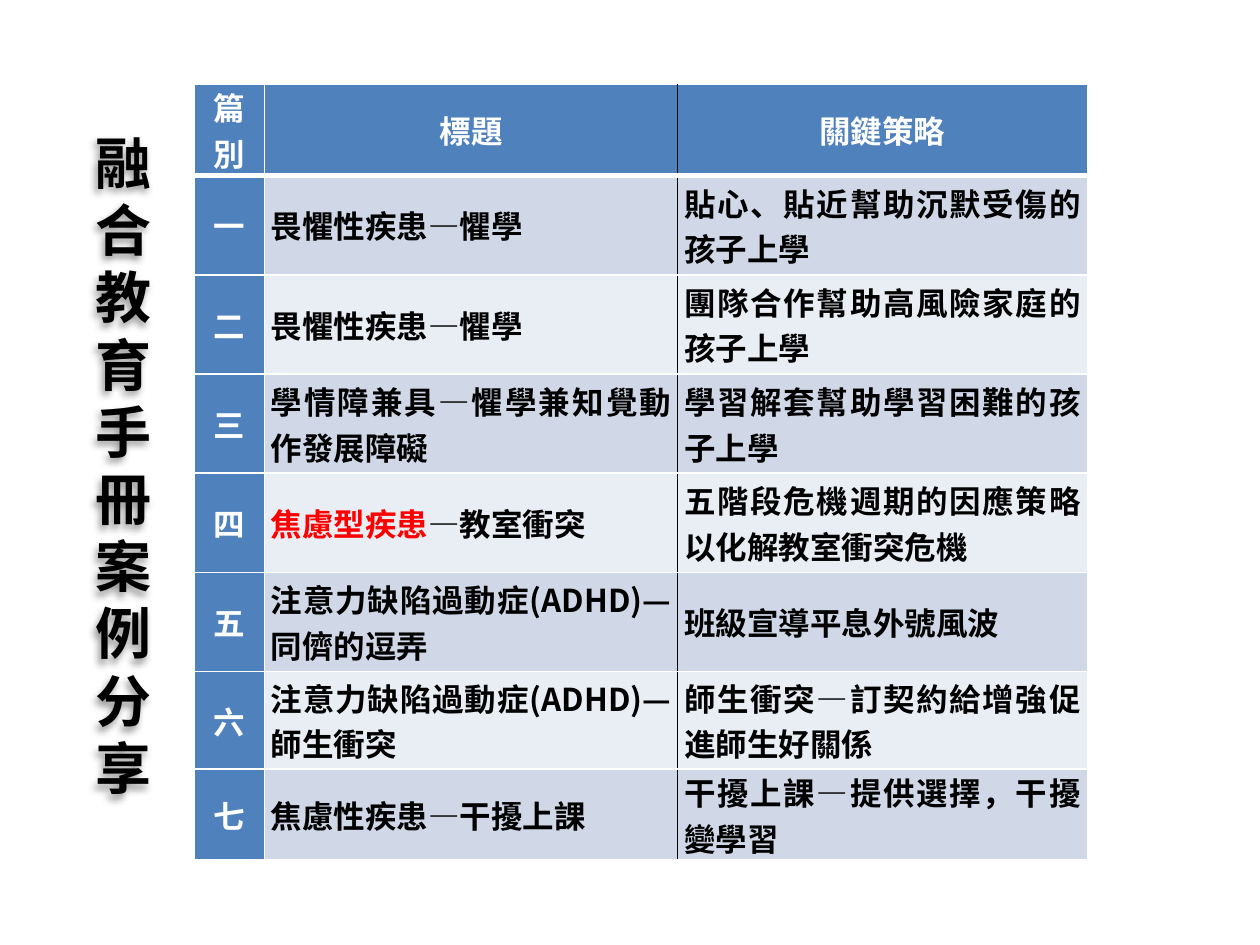
"""Build a slide listing the case studies of an inclusive education handbook."""
from typing import NamedTuple

from lxml import etree
from pptx import Presentation
from pptx.dml.color import RGBColor
from pptx.enum.text import MSO_ANCHOR, MSO_AUTO_SIZE, PP_ALIGN
from pptx.oxml import parse_xml
from pptx.oxml.ns import nsdecls, qn
from pptx.util import Cm, Pt

CENTER, JUSTIFY = PP_ALIGN.CENTER, PP_ALIGN.JUSTIFY
MIDDLE = MSO_ANCHOR.MIDDLE
GROW = MSO_AUTO_SIZE.SHAPE_TO_FIT_TEXT
FONT = "Noto Sans CJK SC"
COLORS = {
    "white": "FFFFFF",
    "black": "000000",
    "red": "FF0000",
    "blue": "4F81BD",
    "odd": "D0D8E8",
    "even": "E9EDF4",
}
COLUMN_WIDTHS = (1.42, 8.33, 8.26)
ROW_HEIGHTS = (1.83, *[2.0] * 5, 1.96, 1.83)


class Case(NamedTuple):
    """One row of the table, with an optional highlighted start of the topic."""

    number: str
    topic: str
    strategy: str
    highlight: str = ""


HEADER = Case("篇別", "標題", "關鍵策略")
CASES = (
    Case("一", "畏懼性疾患—懼學", "貼心、貼近幫助沉默受傷的孩子上學"),
    Case("二", "畏懼性疾患—懼學", "團隊合作幫助高風險家庭的孩子上學"),
    Case("三", "學情障兼具—懼學兼知覺動作發展障礙", "學習解套幫助學習困難的孩子上學"),
    Case("四", "—教室衝突", "五階段危機週期的因應策略以化解教室衝突危機", "焦慮型疾患"),
    Case("五", "注意力缺陷過動症(ADHD)—同儕的逗弄", "班級宣導平息外號風波"),
    Case("六", "注意力缺陷過動症(ADHD)—師生衝突", "師生衝突—訂契約給增強促進師生好關係"),
    Case("七", "焦慮性疾患—干擾上課", "干擾上課—提供選擇，干擾變學習"),
)


def rgb(name: str) -> RGBColor:
    """Return a named colour."""
    return RGBColor.from_string(COLORS[name])


def style_paragraph(para, size: int, color: str, align) -> None:
    """Set the alignment and the bold font of a paragraph."""
    para.alignment = align
    font = para.font
    font.name, font.size, font.bold = FONT, Pt(size), True
    font.color.rgb = rgb(color)
    defaults = para._p.pPr.find(qn("a:defRPr"))
    etree.SubElement(defaults, qn("a:ea")).set("typeface", FONT)


def set_borders(cell, row: int, column: int) -> None:
    """Draw white cell borders, with a black rule between the text columns."""
    borders = (
        ("lnL", "black" if column == 2 else "white", 1),
        ("lnR", "black" if column == 1 else "white", 1),
        ("lnT", "white", 3 if row == 1 else 1),
        ("lnB", "white", 3 if row == 0 else 1),
    )
    properties = cell._tc.get_or_add_tcPr()
    for position, (tag, color, width) in enumerate(borders):
        line = parse_xml(
            f'<a:{tag} {nsdecls("a")} w="{Pt(width)}"><a:solidFill>'
            f'<a:srgbClr val="{COLORS[color]}"/></a:solidFill></a:{tag}>'
        )
        properties.insert(position, line)


def fill_cell(cell, row: int, column: int, case: Case) -> None:
    """Write and style one table cell."""
    is_heading = row == 0 or column == 0
    band = "odd" if row % 2 else "even"
    cell.fill.solid()
    cell.fill.fore_color.rgb = rgb("blue" if is_heading else band)
    cell.vertical_anchor = MIDDLE
    cell.margin_left = cell.margin_right = Cm(0.13)
    cell.margin_top = cell.margin_bottom = Cm(0)
    para = cell.text_frame.paragraphs[0]
    if column == 1 and case.highlight:
        span = para.add_run()
        span.text = case.highlight
        span.font.color.rgb = rgb("red")
    para.add_run().text = (case.number, case.topic, case.strategy)[column]
    color, align = ("white", CENTER) if is_heading else ("black", JUSTIFY)
    style_paragraph(para, 18, color, align)
    set_borders(cell, row, column)


def add_case_table(page) -> None:
    """Add the table of cases."""
    rows = (HEADER, *CASES)
    frame = page.shapes.add_table(
        len(rows), len(COLUMN_WIDTHS), Cm(3.91), Cm(1.7),
        Cm(sum(COLUMN_WIDTHS)), Cm(sum(ROW_HEIGHTS)),
    )
    table = frame.table
    for column, width in zip(table.columns, COLUMN_WIDTHS):
        column.width = Cm(width)
    for row, (case, height) in enumerate(zip(rows, ROW_HEIGHTS)):
        table.rows[row].height = Cm(height)
        for column in range(len(COLUMN_WIDTHS)):
            fill_cell(table.cell(row, column), row, column, case)


def add_side_title(page) -> None:
    """Add the narrow title, one character to a line, with a soft shadow."""
    box = page.shapes.add_textbox(Cm(1.5), Cm(2.36), Cm(2), Cm(13.94))
    frame = box.text_frame
    frame.word_wrap = True
    frame.auto_size = GROW
    frame.margin_top = Cm(0.23)
    para = frame.paragraphs[0]
    para.text = "融合教育手冊案例分享"
    para.line_spacing = Pt(38.4)
    style_paragraph(para, 32, "black", CENTER)
    box._element.spPr.append(parse_xml(
        f'<a:effectLst {nsdecls("a")}><a:outerShdw blurRad="{Pt(4)}" '
        f'dist="{Pt(3)}" dir="8100000" algn="tr" rotWithShape="0">'
        f'<a:srgbClr val="{COLORS["black"]}"><a:alpha val="40000"/></a:srgbClr>'
        "</a:outerShdw></a:effectLst>"
    ))


def main() -> None:
    """Build and save the deck."""
    deck = Presentation()
    deck.slide_width, deck.slide_height = Cm(25.4), Cm(19.05)
    page = deck.slides.add_slide(deck.slide_layouts[6])
    add_case_table(page)
    add_side_title(page)
    deck.save("out.pptx")


if __name__ == "__main__":
    main()
